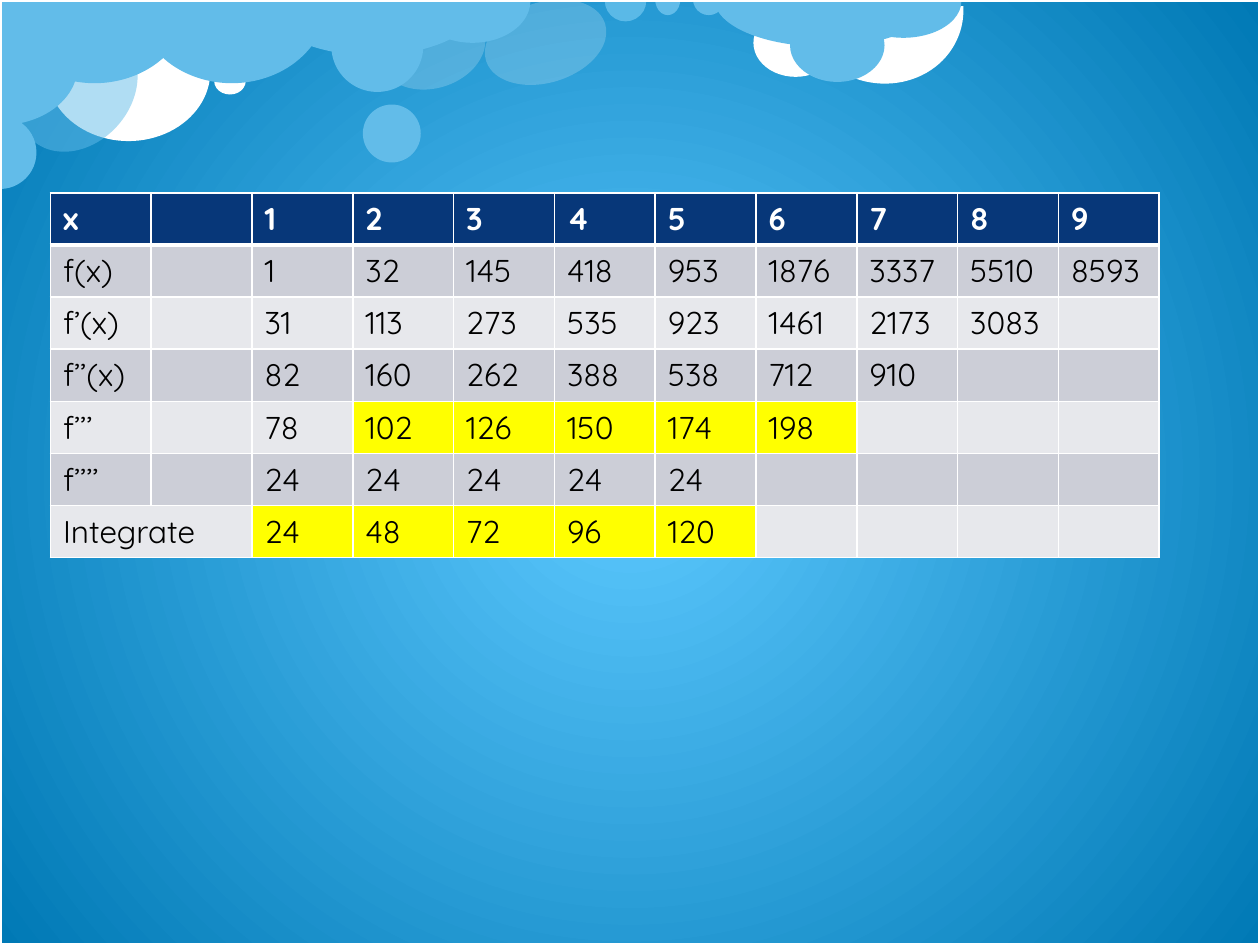
"""Build a slide with a difference table under a cloudy sky."""
from lxml.etree import SubElement as Sub
from pptx import Presentation
from pptx.dml.color import RGBColor as Rgb
from pptx.enum.shapes import MSO_SHAPE as Kind
from pptx.oxml.ns import qn
from pptx.util import Inches, Pt


class Theme:
    font = "Quicksand"
    size = Pt(18)
    white = "FFFFFF"
    black = "000000"
    cloud = "62BCE9"
    pale = "8FD9FB"
    glow = "5DC9FF"
    deep = "0079B5"
    head = "073779"
    bands = ("E7E8EC", "CCCED7")
    mark = "FFFF00"
    thin = 1
    thick = 3
    frame = Pt(2)


def edge(cell, side, width):
    line = Sub(cell._tc.get_or_add_tcPr(), qn(f"a:ln{side}"), w=str(Pt(width)))
    Sub(Sub(line, qn("a:solidFill")), qn("a:srgbClr"), val=Theme.white)


deck = Presentation()
deck.slide_width, deck.slide_height = Inches(10), Inches(7.5)
wide, high = deck.slide_width, deck.slide_height
slide = deck.slides.add_slide(deck.slide_layouts[6])
shapes = slide.shapes

# fmt: off
sky = slide.background.fill
sky.gradient()
for stop, place, tone in zip(sky.gradient_stops, (0, 1), (Theme.glow, Theme.deep)):
    stop.position = place
    stop.color.rgb = Rgb.from_string(tone)
grad = slide.element.find(".//" + qn("a:gradFill"))
grad.remove(grad.find(qn("a:lin")))
path = Sub(grad, qn("a:path"), path="circle")
Sub(path, qn("a:fillToRect"), dict.fromkeys("ltrb", "50000"))

disc, half, arc = (Kind.OVAL, ()), (Kind.PIE, (0, 108)), (Kind.ARC, (151.8, 44.48))
white, cloud, pale = Theme.white, Theme.cloud, Theme.pale
# Left, top, width and height are percent of the slide width.
puffs = [
    (disc, 31.1, -0.5, 6.4, 8.6, 72.8, white, 20),
    (disc, 3.7, 0.1, 13, 11.1, 0, white, 100),
    (arc, 63.9, -6, 12.1, 13.1, 106.5, white, 100),
    (disc, 59.8, 0.7, 6.7, 5.4, 0, white, 100),
    (half, -0.1, -6.6, 15.2, 13.2, 0, cloud, 100),
    (half, 20.8, -4.4, 17.5, 8.8, 0, cloud, 100),
    (disc, 28.8, 8.3, 4.6, 4.6, 0, cloud, 100),
    (disc, 1.9, 1.8, 8.5, 10.7, 41.8, cloud, 50),
    (half, -2.9, 9.2, 5.8, 5.8, 270, cloud, 100),
    (disc, 17, 5.4, 2.5, 2.1, 0, white, 100),
    (half, 10.8, -6.6, 15.2, 13.2, 0, cloud, 100),
    (half, 56.7, -3.8, 17.5, 7.5, 0, cloud, 100),
    (disc, 62.7, 0.7, 7.5, 5.8, 0, cloud, 100),
    (half, 67.1, -2.8, 9.2, 5.8, 0, cloud, 100),
    (disc, 40.1, -1.6, 6.4, 9.9, 72.8, white, 20),
    (half, 48, -1.6, 3.3, 3.3, 0, pale, 50),
    (half, 52, -1.3, 2, 2.5, 0, cloud, 100),
    (half, 55, -1.3, 2.5, 2.5, 0, cloud, 100),
    (disc, 26.3, 0, 7.3, 7.3, 0, cloud, 100),
    (half, 32.9, -3.3, 9.2, 6.7, 0, cloud, 100),
    (half, -4.7, -0.9, 9.3, 12.4, 270, cloud, 100),
]
for (kind, turns), *box, spin, tone, solid in puffs:
    puff = shapes.add_shape(kind, *(int(wide * part / 100) for part in box))
    puff.shadow.inherit = False
    for spot, turn in enumerate(turns):
        puff.adjustments[spot] = turn
    puff.rotation = spin
    puff.fill.solid()
    puff.fill.fore_color.rgb = Rgb.from_string(tone)
    puff.line.fill.background()
    if solid < 100:
        tint = puff.element.spPr.find(".//" + qn("a:srgbClr"))
        Sub(tint, qn("a:alpha"), val=str(solid * 1000))

frame = shapes.add_shape(Kind.RECTANGLE, 0, 0, wide, high)
frame.shadow.inherit = False
frame.fill.background()
frame.line.color.rgb = Rgb.from_string(white)
frame.line.width = Theme.frame

rows = [
    ["x", "", *range(1, 10)],
    ["f(x)", "", 1, 32, 145, 418, 953, 1876, 3337, 5510, 8593],
    ["f’(x)", "", 31, 113, 273, 535, 923, 1461, 2173, 3083],
    ["f’’(x)", "", 82, 160, 262, 388, 538, 712, 910],
    ["f’’’", "", 78, 102, 126, 150, 174, 198],
    ["f’’’’", "", 24, 24, 24, 24, 24],
    ["Integrate", "", 24, 48, 72, 96, 120],
]
marks = {4: range(3, 8), 6: range(2, 7)}
count, step = len(rows[0]), int(wide * 0.08)
tall = Inches(0.41)
table = shapes.add_table(len(rows), count, int(wide * 0.04), Inches(1.53),
                         step * count, tall * len(rows)).table
table.horz_banding = False
for r, row in enumerate(rows):
    table.rows[r].height = tall
    for c in range(count):
        cell = table.cell(r, c)
        edge(cell, "L", Theme.thin)
        edge(cell, "R", Theme.thin)
        edge(cell, "T", Theme.thick if r == 1 else Theme.thin)
        edge(cell, "B", Theme.thick if r == 0 else Theme.thin)
        tone = Theme.head if r == 0 else Theme.bands[r % 2]
        cell.fill.solid()
        cell.fill.fore_color.rgb = Rgb.from_string(
            Theme.mark if c in marks.get(r, ()) else tone)
        if c < len(row) and row[c] != "":
            cell.text_frame.text = str(row[c])
            font = cell.text_frame.paragraphs[0].runs[0].font
            font.name, font.size, font.bold = Theme.font, Theme.size, r == 0
            font.color.rgb = Rgb.from_string(white if r == 0 else Theme.black)
table.cell(6, 0).merge(table.cell(6, 1))

deck.save("out.pptx")
